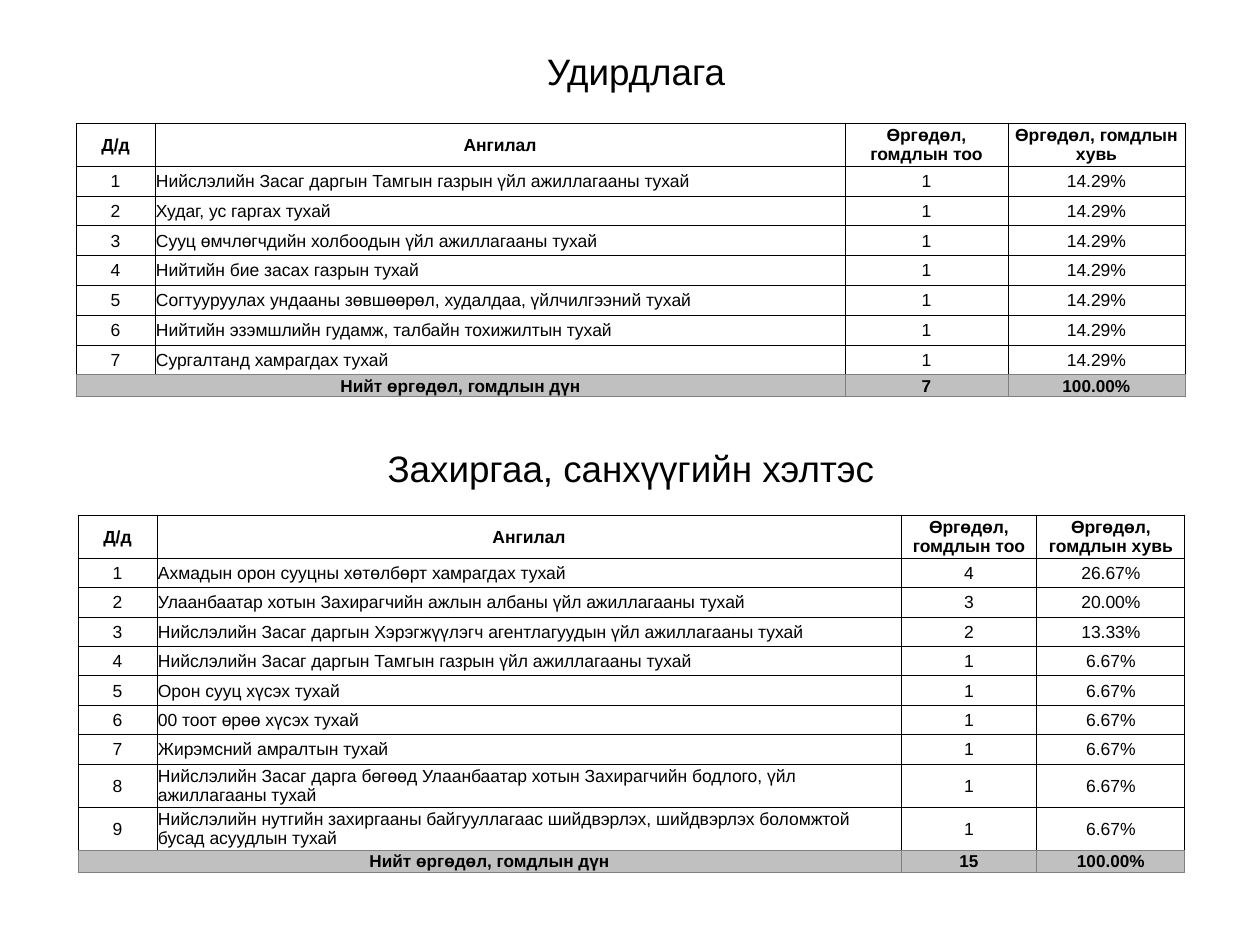
from dataclasses import dataclass

import lxml.etree
import pptx
import pptx.dml.color
import pptx.enum.text
import pptx.oxml.ns
import pptx.util

PX = 914400 // 126
FONT = "Arial"
BLACK = pptx.dml.color.RGBColor(0x00, 0x00, 0x00)
WHITE = pptx.dml.color.RGBColor(0xFF, 0xFF, 0xFF)
GREY = pptx.dml.color.RGBColor(0x80, 0x80, 0x80)
SILVER = pptx.dml.color.RGBColor(0xC0, 0xC0, 0xC0)
CENTER = pptx.enum.text.PP_ALIGN.CENTER
LEFT = pptx.enum.text.PP_ALIGN.LEFT

HEADERS = ("Д/д", "Ангилал", "Өргөдөл, гомдлын тоо", "Өргөдөл, гомдлын хувь")
TOTAL_LABEL = "Нийт өргөдөл, гомдлын дүн"


@dataclass(frozen=True)
class Entry:
    category: str
    count: int
    share: str
    lines: int = 1


@dataclass(frozen=True)
class Section:
    """A heading and its complaints table; lengths are px."""
    heading: str
    heading_left: int
    heading_top: int
    left: int
    top: int
    columns: tuple[int, ...]
    header_height: int
    single_rows_height: int  # shared by all one-line rows
    entries: tuple[Entry, ...]


TALL_ROW = 43
TOTAL_ROW = 22
HEADING_WIDTH, HEADING_HEIGHT = 1012, 57

MANAGEMENT = Section(
    "Удирдлага", 130, 42, 76, 123, (79, 690, 163, 177), 43, 209,
    tuple(Entry(category, 1, "14.29%") for category in (
        "Нийслэлийн Засаг даргын Тамгын газрын үйл ажиллагааны тухай",
        "Худаг, ус гаргах тухай",
        "Сууц өмчлөгчдийн холбоодын үйл ажиллагааны тухай",
        "Нийтийн бие засах газрын тухай",
        "Согтууруулах ундааны зөвшөөрөл, худалдаа, үйлчилгээний тухай",
        "Нийтийн эзэмшлийн гудамж, талбайн тохижилтын тухай",
        "Сургалтанд хамрагдах тухай",
    )),
)
ADMINISTRATION = Section(
    "Захиргаа, санхүүгийн хэлтэс", 125, 440, 78, 515, (79, 744, 136, 148), 43, 206,
    (
        Entry("Ахмадын орон сууцны хөтөлбөрт хамрагдах тухай", 4, "26.67%"),
        Entry("Улаанбаатар хотын Захирагчийн ажлын албаны үйл ажиллагааны тухай", 3, "20.00%"),
        Entry("Нийслэлийн Засаг даргын Хэрэгжүүлэгч агентлагуудын үйл ажиллагааны тухай",
              2, "13.33%"),
        Entry("Нийслэлийн Засаг даргын Тамгын газрын үйл ажиллагааны тухай", 1, "6.67%"),
        Entry("Орон сууц хүсэх тухай", 1, "6.67%"),
        Entry("00 тоот өрөө хүсэх тухай", 1, "6.67%"),
        Entry("Жирэмсний амралтын тухай", 1, "6.67%"),
        Entry("Нийслэлийн Засаг дарга бөгөөд Улаанбаатар хотын Захирагчийн бодлого, "
              "үйл ажиллагааны тухай", 1, "6.67%", lines=2),
        Entry("Нийслэлийн нутгийн захиргааны байгууллагаас шийдвэрлэх, шийдвэрлэх "
              "боломжтой бусад асуудлын тухай", 1, "6.67%", lines=2),
    ),
)


def px(length: int) -> int:
    return length * PX


def write(frame, text: str, *, size: float, bold: bool = False, align=CENTER) -> None:
    para = frame.paragraphs[0]
    para.alignment = align
    span = para.add_run()
    span.text = text
    span.font.name = FONT
    span.font.size = pptx.util.Pt(size)
    span.font.bold = bold
    span.font.color.rgb = BLACK


def set_borders(cell, color, bottom) -> None:
    properties = cell._tc.get_or_add_tcPr()
    for side in "LRTB":
        line = lxml.etree.SubElement(properties, pptx.oxml.ns.qn(f"a:ln{side}"),
                                     w=str(pptx.util.Pt(0.5)))
        fill = lxml.etree.SubElement(line, pptx.oxml.ns.qn("a:solidFill"))
        lxml.etree.SubElement(fill, pptx.oxml.ns.qn("a:srgbClr"),
                              val=str(bottom if side == "B" else color))


def format_cell(cell, fill, border, bottom) -> None:
    cell.margin_left = cell.margin_right = cell.margin_top = px(1)
    cell.margin_bottom = 0
    cell.vertical_anchor = pptx.enum.text.MSO_ANCHOR.MIDDLE
    set_borders(cell, border, bottom)
    cell.fill.solid()
    cell.fill.fore_color.rgb = fill


def place_heading(box, section: Section) -> None:
    box.left, box.top = px(section.heading_left), px(section.heading_top)
    box.width, box.height = px(HEADING_WIDTH), px(HEADING_HEIGHT)
    frame = box.text_frame
    frame.word_wrap = True
    frame.auto_size = pptx.enum.text.MSO_AUTO_SIZE.SHAPE_TO_FIT_TEXT
    frame.vertical_anchor = pptx.enum.text.MSO_ANCHOR.TOP
    write(frame, section.heading, size=21)


def add_complaints_table(page, section: Section) -> None:
    entries = section.entries
    single_row = px(section.single_rows_height) // sum(e.lines == 1 for e in entries)
    heights = [
        px(section.header_height),
        *(single_row if entry.lines == 1 else px(TALL_ROW) for entry in entries),
        px(TOTAL_ROW),
    ]
    rows = [
        HEADERS,
        *((str(number), entry.category, str(entry.count), entry.share)
          for number, entry in enumerate(entries, 1)),
        (TOTAL_LABEL, "", str(sum(entry.count for entry in entries)), "100.00%"),
    ]
    table = page.shapes.add_table(
        len(rows), len(HEADERS), px(section.left), px(section.top),
        px(sum(section.columns)), sum(heights)).table
    table.first_row = table.horz_banding = False
    for column, width in zip(table.columns, section.columns):
        column.width = px(width)

    last = len(rows) - 1
    for i, (values, height) in enumerate(zip(rows, heights)):
        table.rows[i].height = height
        is_header, is_total = i == 0, i == last
        for j, text in enumerate(values):
            cell = table.cell(i, j)
            format_cell(cell, SILVER if is_total else WHITE,
                        GREY if is_total else BLACK,
                        GREY if i >= last - 1 else BLACK)
            if text:
                is_category = j == 1 and not is_header
                write(cell.text_frame, text, size=9.8 if is_total else 10,
                      bold=is_header or is_total,
                      align=LEFT if is_category else CENTER)
    table.cell(last, 0).merge(table.cell(last, 1))


def main() -> None:
    deck = pptx.Presentation()
    deck.slide_width = pptx.util.Inches(10)
    deck.slide_height = pptx.util.Inches(7.5)
    page = deck.slides.add_slide(deck.slide_layouts[5])

    # Management section, headed by the slide title
    place_heading(page.shapes.title, MANAGEMENT)
    add_complaints_table(page, MANAGEMENT)

    # Administration and finance section
    place_heading(page.shapes.add_textbox(0, 0, 0, 0), ADMINISTRATION)
    add_complaints_table(page, ADMINISTRATION)

    deck.save("out.pptx")


if __name__ == "__main__":
    main()
